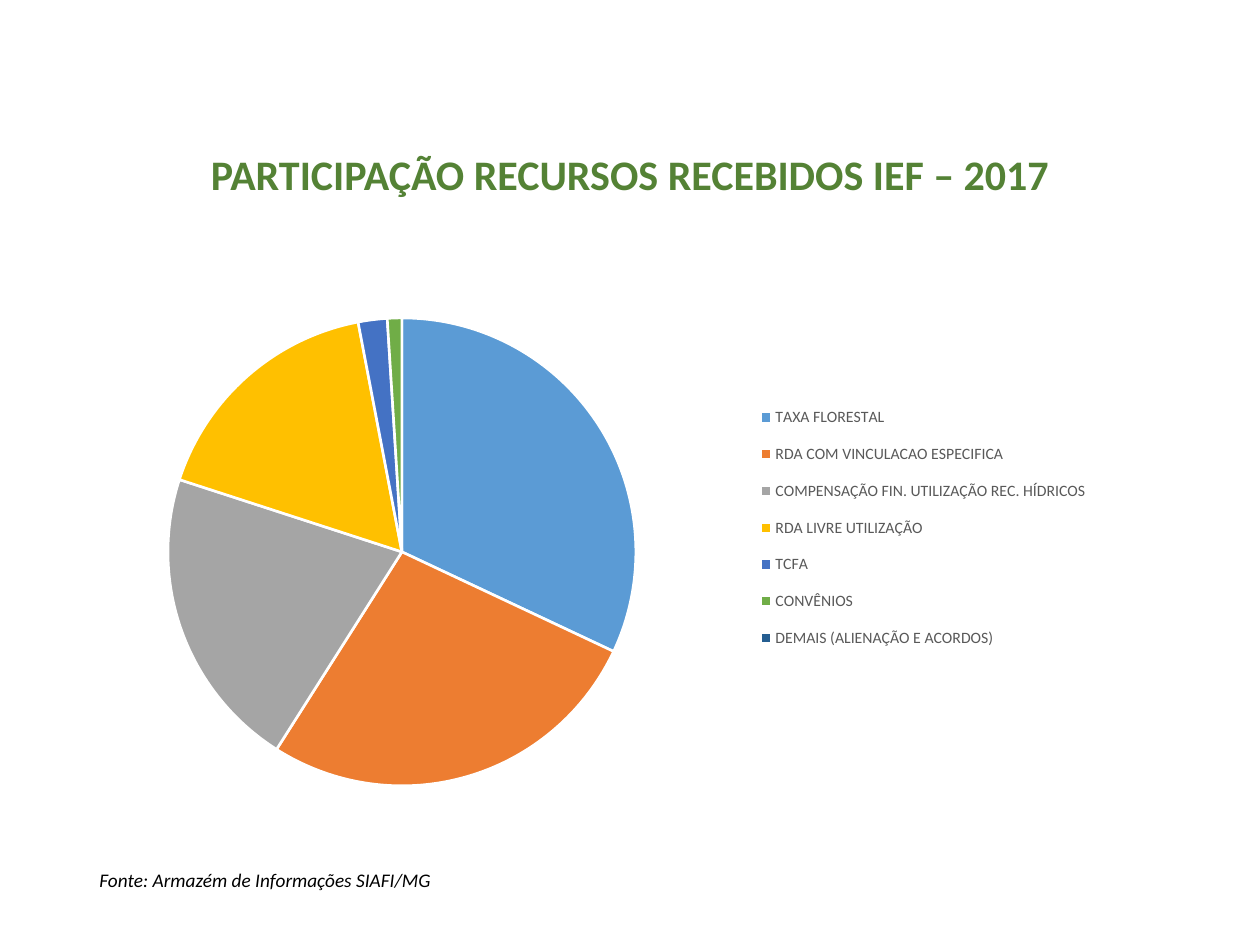
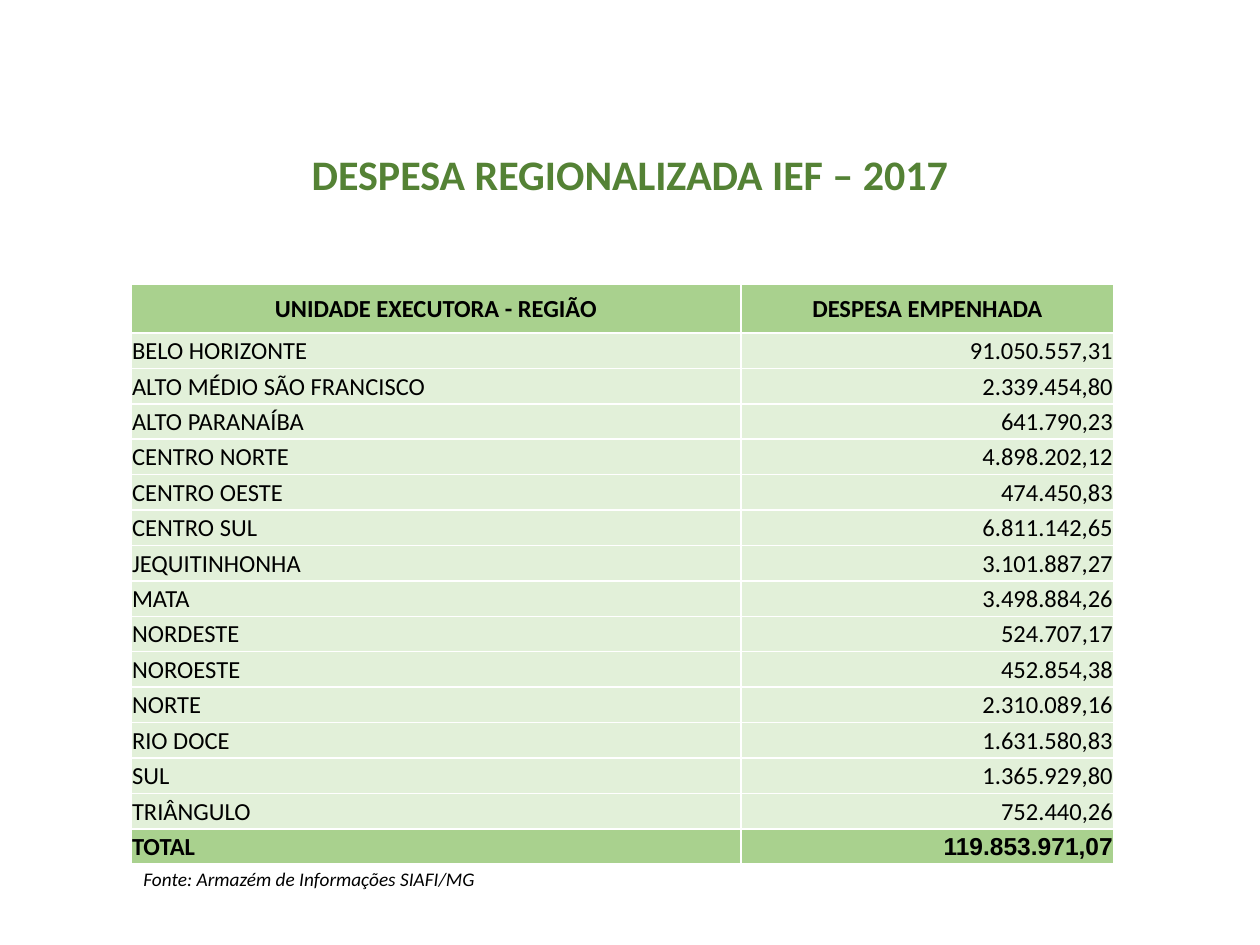
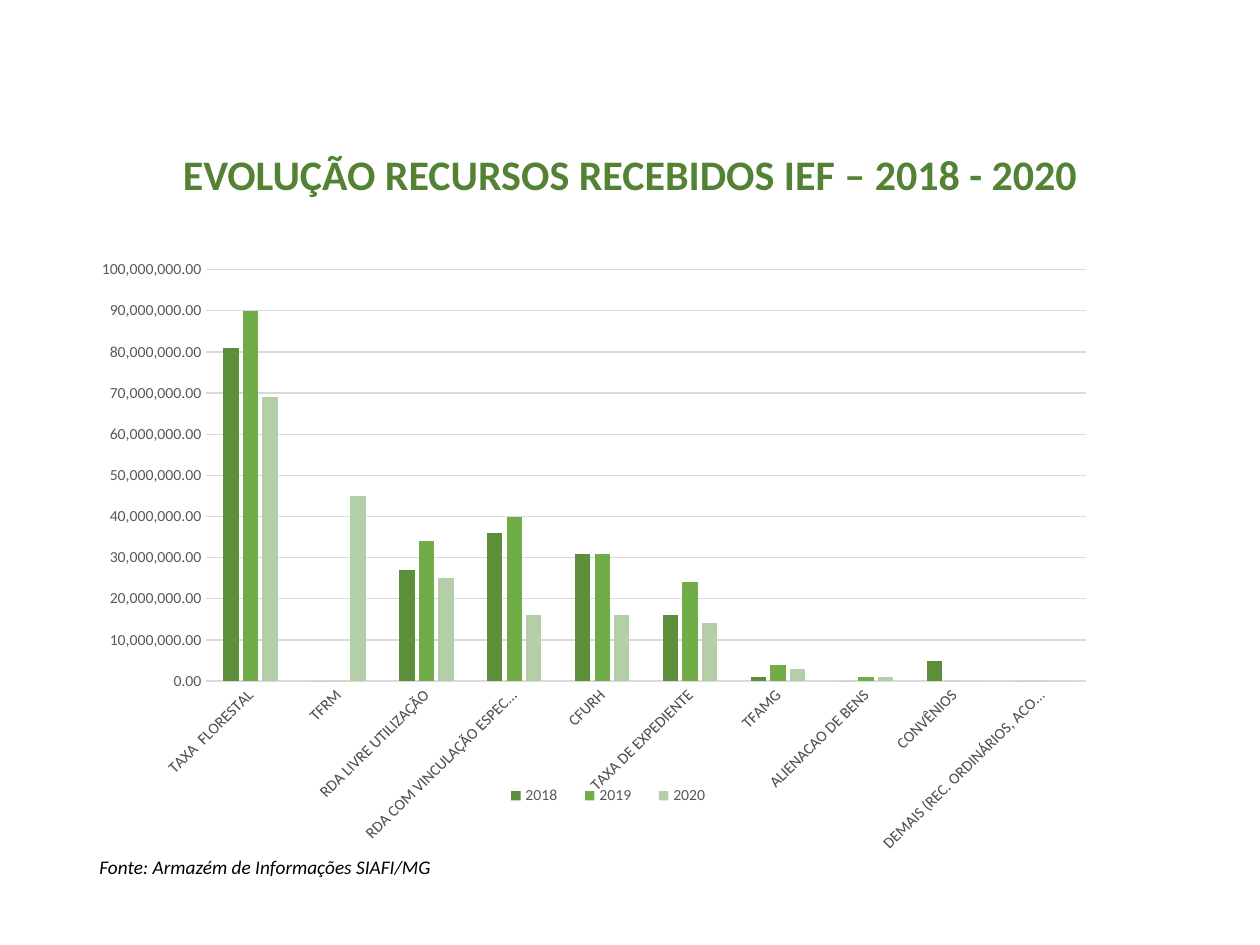
"""Build three slides on the funds and spending of IEF."""
from pptx import Presentation
from pptx import util as u
from pptx.chart.data import CategoryChartData
from pptx.dml.color import RGBColor
from pptx.enum import chart as ch, text as tx
from pptx.oxml import parse_xml
from pptx.oxml.ns import nsdecls, qn

PX = 914400 / 126
GREEN, HEAD, ROW = "548235", "A9D18E", "E2F0D9"
BLACK, WHITE, GREY, RULE = "000000", "FFFFFF", "595959", "D9D9D9"
LEFT, MID, RIGHT = tx.PP_ALIGN.LEFT, tx.PP_ALIGN.CENTER, tx.PP_ALIGN.RIGHT
SOURCE = "Fonte: Armazém de Informações SIAFI/MG"
FRAME = (87, 252, 1086, 600)

SHARES = [
    ("TAXA FLORESTAL", 32, "5B9BD5"),
    ("RDA COM VINCULACAO ESPECIFICA", 27, "ED7D31"),
    ("COMPENSAÇÃO FIN. UTILIZAÇÃO REC. HÍDRICOS", 21, "A5A5A5"),
    ("RDA LIVRE UTILIZAÇÃO", 17, "FFC000"),
    ("TCFA", 2, "4472C4"),
    ("CONVÊNIOS", 1, "70AD47"),
    ("DEMAIS (ALIENAÇÃO E ACORDOS)", 0, "255E91"),
]
COSTS = [
    ("UNIDADE EXECUTORA - REGIÃO", "DESPESA EMPENHADA"),
    ("BELO HORIZONTE", "91.050.557,31"),
    ("ALTO MÉDIO SÃO FRANCISCO", "2.339.454,80"),
    ("ALTO PARANAÍBA", "641.790,23"),
    ("CENTRO NORTE", "4.898.202,12"),
    ("CENTRO OESTE", "474.450,83"),
    ("CENTRO SUL", "6.811.142,65"),
    ("JEQUITINHONHA", "3.101.887,27"),
    ("MATA", "3.498.884,26"),
    ("NORDESTE", "524.707,17"),
    ("NOROESTE", "452.854,38"),
    ("NORTE", "2.310.089,16"),
    ("RIO DOCE", "1.631.580,83"),
    ("SUL", "1.365.929,80"),
    ("TRIÂNGULO", "752.440,26"),
    ("TOTAL", "119.853.971,07"),
]
FUNDS = [
    "TAXA  FLORESTAL", "TFRM", "RDA LIVRE UTILIZAÇÃO",
    "RDA COM VINCULAÇÃO ESPECÍFICA", "CFURH", "TAXA DE EXPEDIENTE", "TFAMG",
    "ALIENACAO DE BENS", "CONVÊNIOS",
    "DEMAIS (REC. ORDINÁRIOS, ACORDOS, DANOS)",
]
MILLION = 1000000
YEARS = [
    ("2018", "5D8F3B", [81, 0, 27, 36, 31, 16, 1, 0, 5, 0]),
    ("2019", "70AD47", [90, 0, 34, 40, 31, 24, 4, 1, 0, 0]),
    ("2020", "B4CFA8", [69, 45, 25, 16, 16, 14, 3, 1, 0, 0]),
]


def emu(*sizes):
    return [u.Emu(round(size * PX)) for size in sizes]


def paint(fill, color):
    fill.solid()
    fill.fore_color.rgb = RGBColor.from_string(color)


def style(font, size, color=BLACK, face="Calibri", bold=False, italic=False):
    font.size, font.name, font.bold, font.italic = u.Pt(size), face, bold, italic
    font.color.rgb = RGBColor.from_string(color)


def write(frame, words, align=LEFT, space=1.0, **form):
    para = frame.paragraphs[0]
    para.alignment, para.line_spacing = align, space
    run = para.add_run()
    run.text = words
    style(run.font, **form)


def label(slide, words, box, **form):
    frame = slide.shapes.add_textbox(*emu(*box)).text_frame
    frame.word_wrap = True
    frame.vertical_anchor = tx.MSO_ANCHOR.MIDDLE
    write(frame, words, **form)


def page(deck, title, left, top):
    slide = deck.slides.add_slide(deck.slide_layouts[6])
    label(slide, title, (87, 130, 1086, 93), align=MID, space=0.9,
          size=24, color=GREEN, bold=True)
    label(slide, SOURCE, (left, top, 1002, 25), size=11, italic=True)
    return slide


def place(parent, index, box, inner=False):
    for old in parent.findall(qn("c:layout")):
        parent.remove(old)
    target = '<c:layoutTarget val="inner"/>' if inner else ""
    modes = "".join(f'<c:{k}Mode val="edge"/>' for k in "xy")
    sizes = "".join(f'<c:{k} val="{v}"/>' for k, v in zip("xywh", box))
    parent.insert(index, parse_xml(
        f'<c:layout {nsdecls("c")}><c:manualLayout>{target}{modes}{sizes}'
        "</c:manualLayout></c:layout>"))


def graph(slide, kind, cats, series, plot, key, side):
    data = CategoryChartData()
    data.categories = cats
    for name, values in series:
        data.add_series(name, values)
    chart = slide.shapes.add_chart(kind, *emu(*FRAME), data).chart
    style(chart.font, 10)
    chart.has_title = False
    chart.has_legend = True
    chart.legend.position = side
    chart.legend.include_in_layout = False
    style(chart.legend.font, 9, GREY)
    place(chart.legend._element, 1, key)
    place(chart._chartSpace.chart.plotArea, 0, plot, inner=True)
    return chart


def pie(slide):
    cats, values, colors = zip(*SHARES)
    chart = graph(slide, ch.XL_CHART_TYPE.PIE, cats, [("Series 1", values)],
                  (0.03, 0.11, 0.52, 0.78), (0.61, 0.23, 0.32, 0.46),
                  ch.XL_LEGEND_POSITION.BOTTOM)
    chart.plots[0].vary_by_categories = True
    for i, color in enumerate(colors):
        part = chart.plots[0].series[0].points[i].format
        paint(part.fill, color)
        paint(part.line.fill, WHITE)
        part.line.width = u.Pt(1.5)


def bars(slide):
    series = [(year, [v * MILLION for v in values]) for year, _, values in YEARS]
    chart = graph(slide, ch.XL_CHART_TYPE.COLUMN_CLUSTERED, FUNDS, series,
                  (0.11, 0.03, 0.81, 0.7), (0.37, 0.9, 0.22, 0.05),
                  ch.XL_LEGEND_POSITION.RIGHT)
    plot = chart.plots[0]
    plot.vary_by_categories = False
    plot.gap_width, plot.overlap = 219, -27
    for bar, (_, color, _) in zip(plot.series, YEARS):
        paint(bar.format.fill, color)
    cat, val = chart.category_axis, chart.value_axis
    for axis in (cat, val):
        axis.major_tick_mark = axis.minor_tick_mark = ch.XL_TICK_MARK.NONE
        style(axis.tick_labels.font, 9, GREY)
    val.has_major_gridlines = True
    for line in (cat.format.line, val.major_gridlines.format.line):
        paint(line.fill, RULE)
        line.width = u.Pt(0.75)
    val.format.line.fill.background()
    val.minimum_scale, val.maximum_scale = 0, 100 * MILLION
    val.major_unit = 10 * MILLION
    val.tick_labels.number_format = "#,##0.00"
    val.tick_labels.number_format_is_linked = False
    cat._element.find(qn("c:txPr")).find(qn("a:bodyPr")).set("rot", "-2700000")


def border(cell):
    props = cell._tc.get_or_add_tcPr()
    for i, side in enumerate("LRTB"):
        props.insert(i, parse_xml(
            f'<a:ln{side} {nsdecls("a")} w="12700"><a:solidFill>'
            f'<a:srgbClr val="{WHITE}"/></a:solidFill></a:ln{side}>'))


def grid(slide):
    wide, high, top = (610, 373), 581, 49
    last = len(COSTS) - 1
    table = slide.shapes.add_table(
        len(COSTS), 2, *emu(131, 284, sum(wide), high)).table
    for col, width in zip(table.columns, emu(*wide)):
        col.width = width
    for r, words in enumerate(COSTS):
        table.rows[r].height = emu((high - top) / last if r else top)[0]
        strong = r in (0, last)
        for c, word in enumerate(words):
            cell = table.cell(r, c)
            paint(cell.fill, HEAD if strong else ROW)
            border(cell)
            cell.margin_left, cell.margin_right, cell.margin_top = emu(1, 1, 1)
            cell.margin_bottom = 0
            cell.vertical_anchor = tx.MSO_ANCHOR.MIDDLE
            write(cell.text_frame, word, size=14, bold=strong,
                  align=(LEFT, RIGHT)[c] if r else MID,
                  face="Arial" if (r, c) == (last, 1) else "Calibri")


def main():
    deck = Presentation()
    deck.slide_width, deck.slide_height = emu(1260, 945)
    pie(page(deck, "PARTICIPAÇÃO RECURSOS RECEBIDOS IEF – 2017", 87, 867))
    grid(page(deck, "DESPESA REGIONALIZADA IEF – 2017", 131, 866))
    bars(page(deck, "EVOLUÇÃO RECURSOS RECEBIDOS IEF – 2018 - 2020", 87, 854))
    deck.save("out.pptx")


if __name__ == "__main__":
    main()
